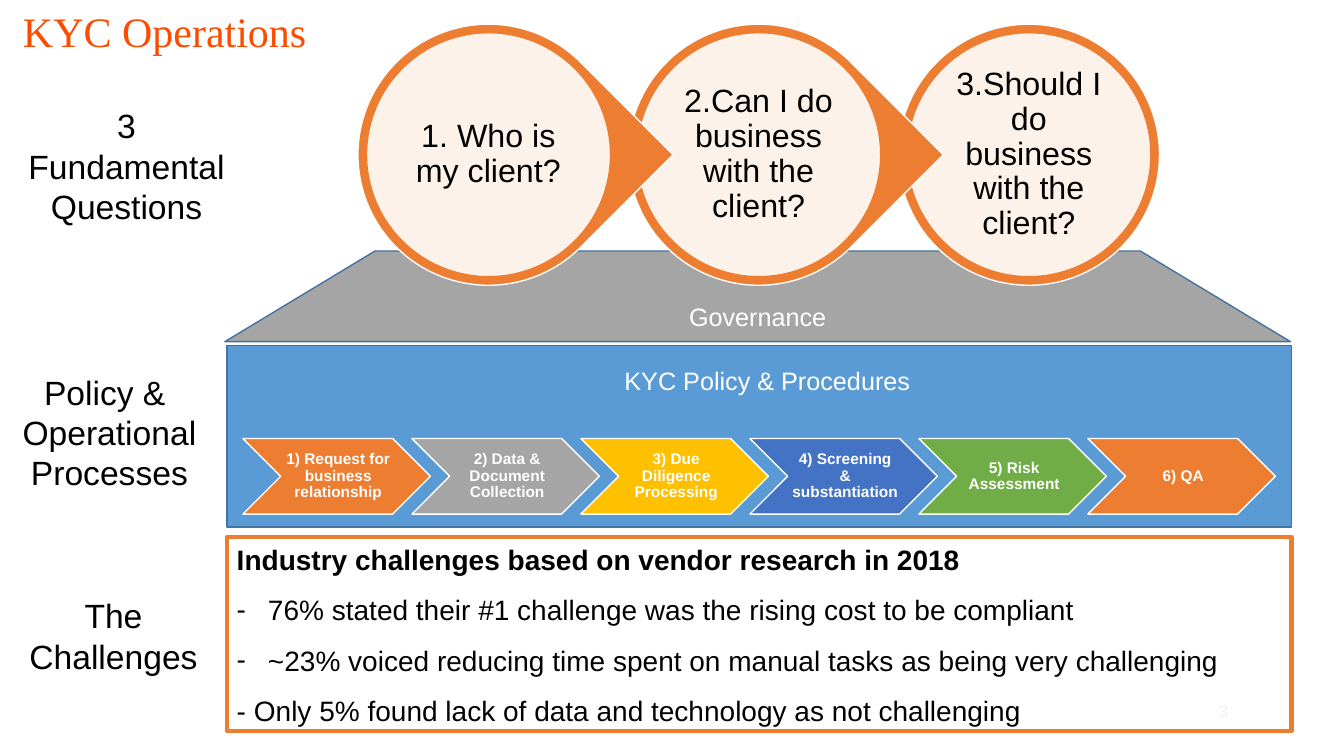
from pptx import Presentation, util as u
from pptx.dml.color import RGBColor
from pptx.enum import shapes, text
from pptx.oxml import ns, xmlchemy

Shape, Align, Anchor = shapes.MSO_SHAPE, text.PP_ALIGN, text.MSO_ANCHOR
ORANGE, GRAY, BLUE, WHITE, BLACK = "ED7D31", "A5A5A5", "5B9BD5", "FFFFFF", "000000"
EDGE = "43739E"

# Content
TITLE = "KYC Operations"
QUESTIONS = [
    "1. Who is my client?",
    "2.Can I do business with the client?",
    "3.Should I do business with the client?",
]
STEPS = [
    ("1) Request for business relationship", ORANGE),
    ("2) Data & Document Collection", GRAY),
    ("3) Due Diligence Processing", "FFC000"),
    ("4) Screening & substantiation", "4472C4"),
    ("5) Risk Assessment", "70AD47"),
    ("6) QA", ORANGE),
]
LABELS = [
    (-0.04, 3.1, ["Policy & ", "Operational Processes"]),
    (0.13, 0.46, ["3 Fundamental Questions"]),
    (0, 5.12, ["The Challenges"]),
]
BANNERS = [
    (4.39, 3.6, "KYC Policy & Procedures ", BLUE),
    (4.26, 2.97, "Governance", GRAY),
]
CHALLENGES_HEAD = "Industry challenges based on vendor research in 2018"
CHALLENGES = [  # wording, bulleted
    ("76% stated their #1 challenge was the rising cost to be compliant", True),
    ("~23% voiced reducing time spent on manual tasks as being very challenging", True),
    ("- Only 5% found lack of data and technology as not challenging", False),
]

deck = Presentation()
deck.slide_width, deck.slide_height = u.Inches(13.33), u.Inches(7.5)
page = deck.slides.add_slide(deck.slide_layouts[6])


def color(value):
    return RGBColor.from_string(value)


def add_child(parent, tag, **attributes):
    child = xmlchemy.OxmlElement(tag)
    for name, value in attributes.items():
        child.set(name, str(value))
    parent.append(child)
    return child


def add_shape(kind, area, fill, line=None, width=1, opacity=100):
    shape = page.shapes.add_shape(kind, *map(u.Inches, area))
    shape.shadow.inherit = False
    shape.fill.solid()
    shape.fill.fore_color.rgb = color(fill)
    if opacity < 100:
        swatch = shape.fill._xPr.find(".//" + ns.qn("a:srgbClr"))
        add_child(swatch, "a:alpha", val=opacity * 1000)
    if line:
        shape.line.color.rgb = color(line)
        shape.line.width = u.Pt(width)
    else:
        shape.line.fill.background()
    return shape


def add_para(frame, words, size, ink=BLACK, font="Arial", bold=False,
             align=Align.CENTER, spacing=None, first=False):
    para = frame.paragraphs[0] if first else frame.add_paragraph()
    para.alignment = align
    if spacing:
        para.line_spacing = spacing
    span = para.add_run()
    span.text = words
    span.font.size, span.font.name, span.font.bold = u.Pt(size), font, bold
    span.font.color.rgb = color(ink)
    return para


def set_frame(box, anchor=Anchor.MIDDLE, insets=(0.1, 0.05, 0.1, 0.05)):
    frame = box.text_frame
    frame.word_wrap = True
    frame.vertical_anchor = anchor
    (frame.margin_left, frame.margin_top,
     frame.margin_right, frame.margin_bottom) = map(u.Inches, insets)
    return frame


def add_text(area, lines, size, insets=(0.1, 0.05, 0.1, 0.05), **style):
    box = page.shapes.add_textbox(*map(u.Inches, area))
    frame = set_frame(box, insets=insets)
    for i, words in enumerate(lines):
        add_para(frame, words, size, first=i == 0, **style)


# Slide number, governance roof, policy block and title
add_text((9.3, 6.85, 2.98, 0.4), ["3"], 12, ink="898989", align=Align.RIGHT)
roof = add_shape(Shape.TRAPEZOID, (2.23, 2.49, 10.57, 0.9), GRAY, EDGE)
roof.adjustments[0] = 1.656
add_shape(Shape.RECTANGLE, (2.25, 3.43, 10.56, 1.8), BLUE, EDGE)
add_text((0.13, -0.19, 11.5, 1.06), [TITLE], 30, ink="FC4C02",
         font="Times New Roman", align=Align.LEFT, spacing=0.9)

# Question rings, the last one at the back
RING, DISC, WORDS, RING_LEFT, RING_TOP, RING_STEP = 2.59, 2.42, 1.73, 3.55, 0.24, 2.68
for i in reversed(range(len(QUESTIONS))):
    left = RING_LEFT + i * RING_STEP

    def centered(size):
        gap = (RING - size) / 2
        return left + gap, RING_TOP + gap, size, size

    is_last = i == len(QUESTIONS) - 1
    ring = add_shape(Shape.OVAL if is_last else Shape.TEAR, centered(RING), ORANGE, WHITE)
    if not is_last:
        ring.adjustments[0] = 1
        ring.rotation = 45
    add_shape(Shape.OVAL, centered(DISC), WHITE, ORANGE, opacity=90)
    add_text(centered(WORDS), [QUESTIONS[i]], 23, insets=(0.03,) * 4, spacing=0.9)

# Process chevrons
for i, (words, fill) in enumerate(STEPS):
    left = 2.41 + i * 1.676
    add_shape(Shape.CHEVRON, (left, 4.35, 1.86, 0.75), fill, WHITE)
    add_text((left + 0.37, 4.35, 1.12, 0.75), [words], 11,
             insets=(0.05, 0.02, 0.02, 0.02), ink=WHITE, bold=True, spacing=0.9)

# Challenges panel
panel = add_shape(Shape.RECTANGLE, (2.25, 5.33, 10.56, 1.92), WHITE, ORANGE, 3, opacity=88)
frame = set_frame(panel, Anchor.TOP)
add_para(frame, CHALLENGES_HEAD, 20, bold=True, align=Align.LEFT, first=True)
for words, bulleted in CHALLENGES:
    para = add_para(frame, words, 20, align=Align.LEFT, spacing=1.5)
    if bulleted:
        props = para._p.get_or_add_pPr()
        props.set("marL", str(u.Inches(0.31)))
        props.set("indent", str(-u.Inches(0.31)))
        add_child(props, "a:buFont", typeface="Arial")
        add_child(props, "a:buChar", char="-")

# Row labels and banner captions
for left, top, lines in LABELS:
    add_text((left, top, 2.25, 2.37), lines, 24)
for left, top, words, fill in BANNERS:
    banner = add_shape(Shape.RECTANGLE, (left, top, 6.51, 0.34), fill)
    add_para(set_frame(banner), words, 18, ink=WHITE, first=True)

deck.save("out.pptx")
